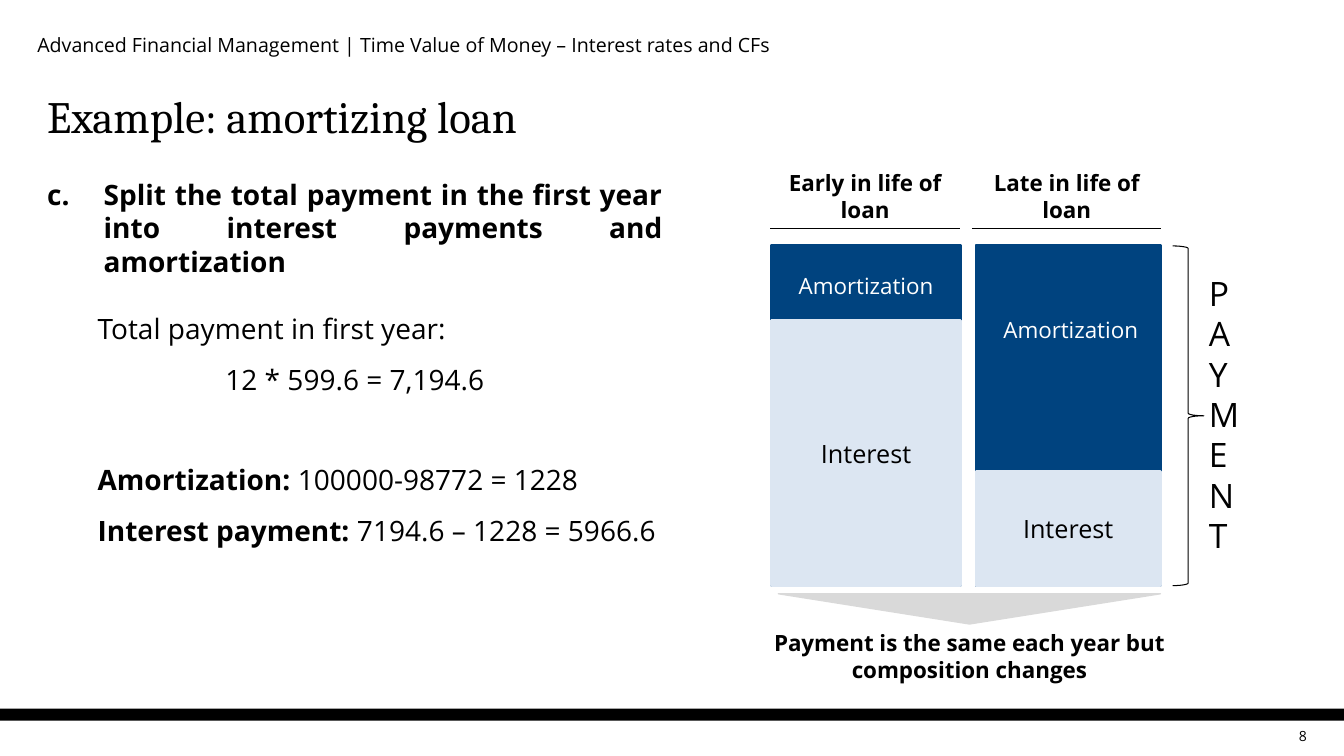
from lxml import etree
from pptx import Presentation
from pptx.dml.color import RGBColor
from pptx.enum.shapes import MSO_CONNECTOR, MSO_SHAPE
from pptx.enum.text import MSO_ANCHOR, PP_ALIGN
from pptx.oxml.ns import qn
from pptx.util import Inches, Pt

BLACK = RGBColor(0x00, 0x00, 0x00)
WHITE = RGBColor(0xFF, 0xFF, 0xFF)
NAVY = RGBColor(0x00, 0x43, 0x7F)
PALE_BLUE = RGBColor(0xDC, 0xE6, 0xF2)
GREY = RGBColor(0xD9, 0xD9, 0xD9)

LEFT, CENTER, RIGHT, JUSTIFY = PP_ALIGN.LEFT, PP_ALIGN.CENTER, PP_ALIGN.RIGHT, PP_ALIGN.JUSTIFY
TOP, MIDDLE, BOTTOM = MSO_ANCHOR.TOP, MSO_ANCHOR.MIDDLE, MSO_ANCHOR.BOTTOM
RECTANGLE = MSO_SHAPE.RECTANGLE
TRIANGLE = MSO_SHAPE.ISOSCELES_TRIANGLE
BRACE = MSO_SHAPE.RIGHT_BRACE
STRAIGHT = MSO_CONNECTOR.STRAIGHT

BODY_FONT = "Open Sans"
TITLE_FONT = "Cambria"


class LoanSlide:
    def __init__(self, deck):
        self.slide = deck.slides.add_slide(deck.slide_layouts[6])
        self.shapes = self.slide.shapes

    def style(self, font, size, color=BLACK, bold=False, name=BODY_FONT):
        font.name, font.size, font.bold = name, Pt(size), bold
        font.color.rgb = color

    def text(self, box, words, size, align=LEFT, anchor=TOP, inset=True, **look):
        label = self.shapes.add_textbox(*map(Inches, box))
        frame = label.text_frame
        frame.word_wrap = True
        frame.vertical_anchor = anchor
        if not inset:
            frame.margin_left = frame.margin_right = 0
            frame.margin_top = frame.margin_bottom = 0
        frame.text = words
        frame.paragraphs[0].alignment = align
        self.style(frame.paragraphs[0].runs[0].font, size, **look)
        return frame

    def shape(self, kind, box, fill=None, line=None, width=1, words=""):
        block = self.shapes.add_shape(kind, *map(Inches, box))
        block.shadow.inherit = False
        if fill is None:
            block.fill.background()
        else:
            block.fill.solid()
            block.fill.fore_color.rgb = fill
        if line is None:
            block.line.fill.background()
        else:
            block.line.color.rgb = line
            block.line.width = Pt(width)
        if words:
            frame = block.text_frame
            frame.text = words
            frame.vertical_anchor = MIDDLE
            frame.paragraphs[0].alignment = CENTER
            self.style(frame.paragraphs[0].runs[0].font, 18)
        return block

    def rule(self, left, right, y):
        line = self.shapes.add_connector(STRAIGHT, *map(Inches, (left, y, right, y)))
        line.line.color.rgb = BLACK
        line.line.width = Pt(1)
        etree.SubElement(line._element.spPr, qn("a:effectLst"))

    def paragraph(self, frame, parts, space, align=JUSTIFY, indent=0.0):
        """Append a paragraph made of (words, bold) parts."""
        paragraph = frame.add_paragraph()
        paragraph.alignment = align
        paragraph.space_before = Pt(space)
        paragraph._p.get_or_add_pPr().set("marL", str(Inches(indent)))
        for words, bold in parts:
            run = paragraph.add_run()
            run.text = words
            self.style(run.font, 20, bold=bold)

    def number(self, paragraph, start, hang):
        """Give a paragraph a hanging letter such as c."""
        properties = paragraph._p.get_or_add_pPr()
        properties.set("marL", str(Inches(hang)))
        properties.set("indent", str(-Inches(hang)))
        etree.SubElement(properties, qn("a:buFont"), typeface="+mj-lt")
        etree.SubElement(properties, qn("a:buAutoNum"), type="alphaLcPeriod", startAt=str(start))

    def payment_bar(self, left, width, split, heading, heading_left, label_top):
        """Draw one payment, divided at height split, under its heading."""
        top, bottom = 2.43, 5.81
        self.shape(RECTANGLE, (left, top, width, bottom - top), NAVY, NAVY, 2)
        self.shape(RECTANGLE, (left, split, width, bottom - split), PALE_BLUE, PALE_BLUE, 2, "Interest")
        self.text((left + 0.04, label_top, 1.8, 0.37), "Amortization", 16, CENTER, color=WHITE)
        self.text((heading_left, 1.63, 1.88, 0.64), heading, 16, CENTER, bold=True)
        self.rule(heading_left, heading_left + 1.88, 2.27)


def main():
    deck = Presentation()
    deck.slide_width, deck.slide_height = Inches(13.33), Inches(7.5)
    page = LoanSlide(deck)

    page.text((12.44, 7.18, 0.52, 0.24), "8", 10, RIGHT, MIDDLE, inset=False)
    page.shape(RECTANGLE, (0, 7.03, 13.33, 0.12), BLACK)
    page.text((0.37, 0.27, 12.6, 0.35),
              "Advanced Financial Management | Time Value of Money – Interest rates and CFs",
              14, JUSTIFY, MIDDLE, inset=False)
    page.text((0.37, 0.7, 12.6, 0.76), "Example: amortizing loan", 32, JUSTIFY, BOTTOM, name=TITLE_FONT)

    solution = page.text((0.37, 1.71, 6.3, 5.05),
                         "Split the total payment in the first year into interest payments and amortization",
                         20, JUSTIFY, bold=True)
    page.number(solution.paragraphs[0], 3, 0.56)
    page.paragraph(solution, [("Total payment in first year:", False)], 24, indent=0.5)
    page.paragraph(solution, [("12 * 599.6 = 7,194.6", False)], 12, CENTER)
    page.paragraph(solution, [("Amortization:", True), (" 100000-98772 = 1228", False)], 48, indent=0.5)
    page.paragraph(solution, [("Interest payment:", True), (" 7194.6 – 1228 = 5966.6", False)], 12, indent=0.5)

    page.payment_bar(7.65, 1.88, 3.18, "Early in life of loan", 7.64, 2.65)
    page.payment_bar(9.68, 1.83, 4.68, "Late in life of loan", 9.64, 3.09)

    page.shape(BRACE, (11.63, 2.44, 0.31, 3.37), line=BLACK, width=0.75)
    page.text((11.89, 2.66, 0.41, 2.93), "PAYMENT", 24)

    page.text((7.52, 6.19, 4.19, 0.64), "Payment is the same each year but composition changes",
              16, CENTER, bold=True)
    pointer = page.shape(TRIANGLE, (7.72, 5.89, 3.79, 0.3), GREY, GREY)
    pointer.rotation = 180

    deck.save("out.pptx")


if __name__ == "__main__":
    main()
